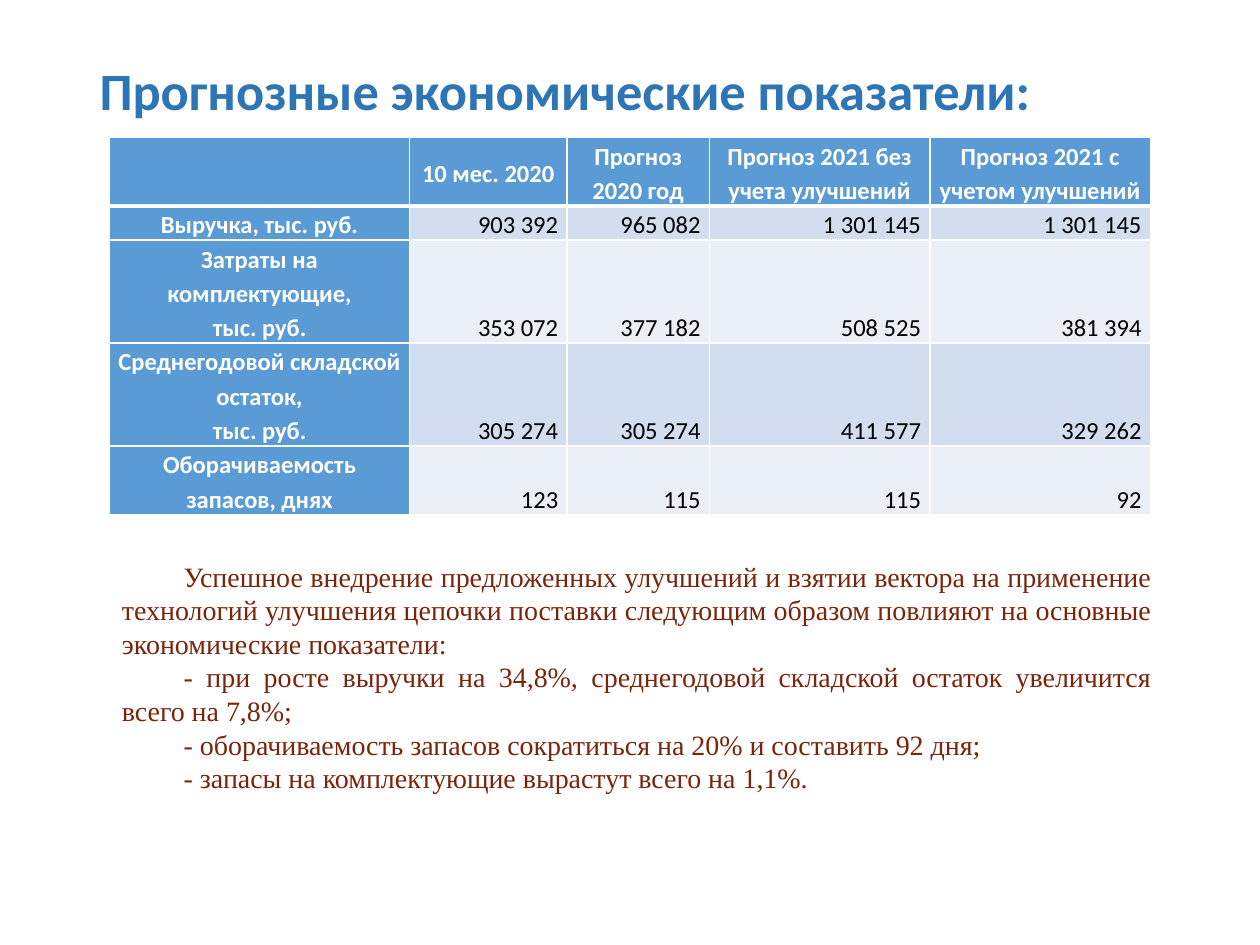
import lxml.etree
import pptx
import pptx.dml.color
import pptx.enum.text
import pptx.oxml.ns
import pptx.util

RGBColor = pptx.dml.color.RGBColor
ALIGN = pptx.enum.text.PP_ALIGN
ANCHOR = pptx.enum.text.MSO_ANCHOR
Pt = pptx.util.Pt

WHITE = RGBColor(0xFF, 0xFF, 0xFF)
BLACK = RGBColor(0x00, 0x00, 0x00)
TITLE_BLUE = RGBColor(0x2E, 0x75, 0xB6)
HEADER_BLUE = RGBColor(0x5B, 0x9B, 0xD5)
BAND_COLORS = (RGBColor(0xD2, 0xDE, 0xEF), RGBColor(0xEA, 0xEF, 0xF7))
BROWN = RGBColor(0x7A, 0x24, 0x0C)

TITLE_FONT = {"name": "Calibri", "size": Pt(30), "bold": True}
HEADER_FONT = {"name": "Calibri", "size": Pt(14), "bold": True}
VALUE_FONT = {"name": "Calibri", "size": Pt(14), "bold": False}
BODY_FONT = {"name": "Times New Roman", "size": Pt(16), "bold": False}

# Boxes: left, top, width, height in percent of the slide
TITLE_BOX = (6.9, 5.33, 86.2, 9.2)
TABLE_BOX = (8.7, 14.53, 82.6, 39.6)
CONCLUSION_BOX = (8.7, 58.53, 83.7, 26.53)

TITLE = "Прогнозные экономические показатели:"
ROWS = (
    ("", "10 мес. 2020", "Прогноз 2020 год",
     "Прогноз 2021 без учета улучшений", "Прогноз 2021 с учетом улучшений"),
    ("Выручка, тыс. руб.", "903 392", "965 082", "1 301 145", "1 301 145"),
    ("Затраты на комплектующие,\vтыс. руб.",
     "353 072", "377 182", "508 525", "381 394"),
    ("Среднегодовой складской остаток,\vтыс. руб.",
     "305 274", "305 274", "411 577", "329 262"),
    ("Оборачиваемость запасов, днях", "123", "115", "115", "92"),
)
COLUMN_SHARES = (2.38, 1.25, 1.13, 1.75, 1.75)
ROW_LINES = (2, 1, 3, 3, 2)
CONCLUSIONS = (
    "Успешное внедрение предложенных улучшений и взятии вектора на применение "
    "технологий улучшения цепочки поставки следующим образом повлияют на "
    "основные экономические показатели:",
    "- при росте выручки на 34,8%, среднегодовой складской остаток увеличится "
    "всего на 7,8%;",
    "- оборачиваемость запасов сократиться на 20% и составить 92 дня;",
    "- запасы на комплектующие вырастут всего на 1,1%.",
)


def set_attributes(target, values):
    for name, value in values.items():
        setattr(target, name, value)


def format_paragraph(paragraph, layout, font, color):
    set_attributes(paragraph, layout)
    for run in paragraph.runs:
        set_attributes(run.font, font)
        run.font.color.rgb = color


def to_lengths(presentation, box):
    sides = (presentation.slide_width, presentation.slide_height) * 2
    return [int(side * share / 100) for side, share in zip(sides, box)]


def add_border(cell, side, width):
    properties = cell._tc.get_or_add_tcPr()
    qn = pptx.oxml.ns.qn
    line = lxml.etree.SubElement(properties, qn(f"a:ln{side}"), w=str(Pt(width)))
    fill = lxml.etree.SubElement(line, qn("a:solidFill"))
    lxml.etree.SubElement(fill, qn("a:srgbClr"), val=str(WHITE))


def place_title(slide, box):
    title = slide.shapes.title
    set_attributes(title, dict(zip(("left", "top", "width", "height"), box)))
    frame = title.text_frame
    frame.text = TITLE
    frame.vertical_anchor = ANCHOR.MIDDLE
    format_paragraph(frame.paragraphs[0],
                     {"alignment": ALIGN.LEFT, "line_spacing": 0.9},
                     TITLE_FONT, TITLE_BLUE)


def fill_cell(cell, text, row, column):
    is_header = row == 0 or column == 0
    side_inset = pptx.util.Inches(0.07)
    set_attributes(cell, {
        "text": text,
        "margin_left": side_inset, "margin_right": side_inset,
        "margin_top": 0, "margin_bottom": 0,
        "vertical_anchor": ANCHOR.MIDDLE if is_header else ANCHOR.BOTTOM,
    })
    for side in "LRTB":
        # The thick rule separates the header row from the values
        thick = (row, side) in ((0, "B"), (1, "T"))
        add_border(cell, side, 3 if thick else 1)
    cell.fill.solid()
    cell.fill.fore_color.rgb = (
        HEADER_BLUE if is_header else BAND_COLORS[(row - 1) % 2])
    format_paragraph(
        cell.text_frame.paragraphs[0],
        {"alignment": ALIGN.CENTER if is_header else ALIGN.RIGHT,
         "line_spacing": 1.15},
        HEADER_FONT if is_header else VALUE_FONT,
        WHITE if is_header else BLACK)


def place_table(slide, box):
    width, height = box[2:]
    table = slide.shapes.add_table(len(ROWS), len(ROWS[0]), *box).table
    for column, share in zip(table.columns, COLUMN_SHARES):
        column.width = int(width * share / sum(COLUMN_SHARES))
    for row, lines in zip(table.rows, ROW_LINES):
        row.height = int(height * lines / sum(ROW_LINES))
    for row, texts in enumerate(ROWS):
        for column, text in enumerate(texts):
            fill_cell(table.cell(row, column), text, row, column)


def place_conclusions(slide, box):
    frame = slide.shapes.add_textbox(*box).text_frame
    frame.word_wrap = True
    frame.auto_size = pptx.enum.text.MSO_AUTO_SIZE.SHAPE_TO_FIT_TEXT
    frame.text = "\n".join(CONCLUSIONS)
    for paragraph in frame.paragraphs:
        properties = paragraph._p.get_or_add_pPr()
        properties.set("marL", "0")
        properties.set("indent", str(pptx.util.Inches(0.49)))
        format_paragraph(paragraph, {"alignment": ALIGN.JUSTIFY},
                         BODY_FONT, BROWN)


def main():
    presentation = pptx.Presentation()
    presentation.slide_width = pptx.util.Inches(10)
    presentation.slide_height = pptx.util.Inches(7.5)
    slide = presentation.slides.add_slide(
        presentation.slide_layouts.get_by_name("Title Only"))
    place_title(slide, to_lengths(presentation, TITLE_BOX))
    place_table(slide, to_lengths(presentation, TABLE_BOX))
    place_conclusions(slide, to_lengths(presentation, CONCLUSION_BOX))
    presentation.save("out.pptx")


if __name__ == "__main__":
    main()
